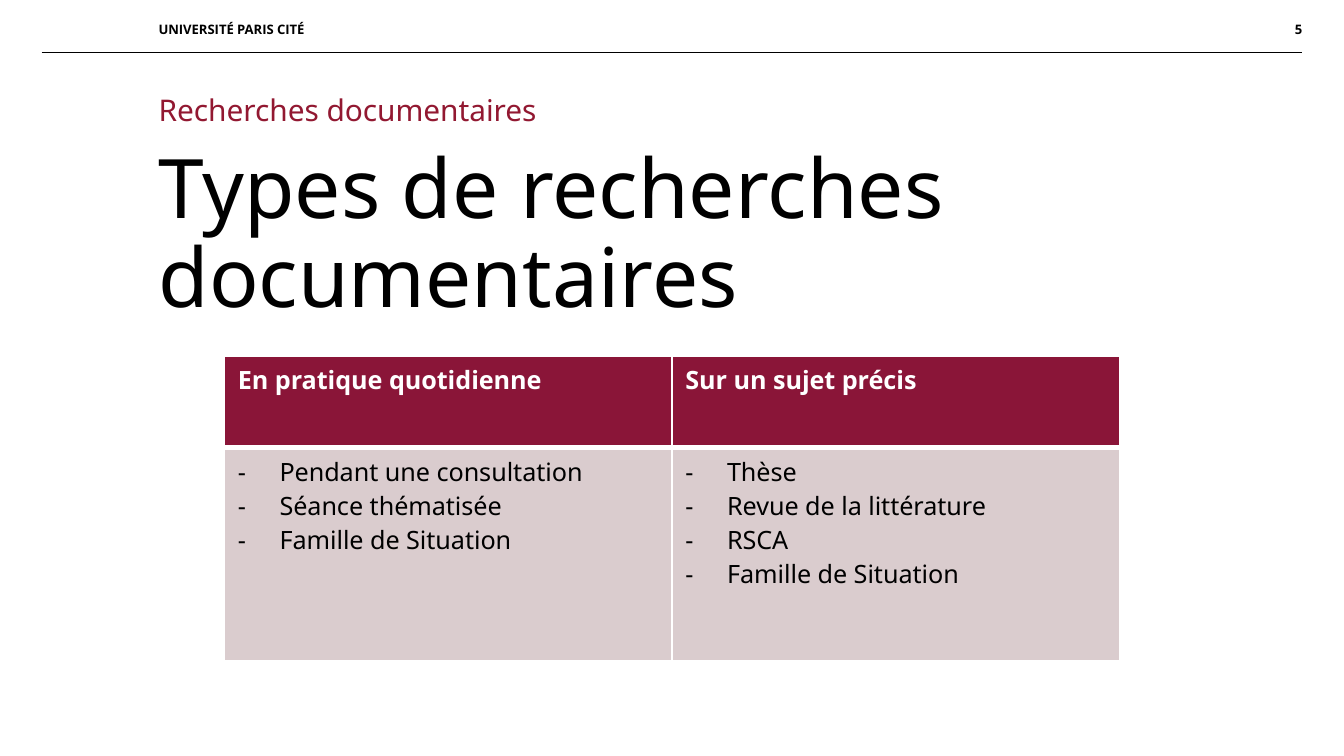
from dataclasses import dataclass

from lxml import etree
from pptx import Presentation
from pptx import util as u
from pptx.dml.color import RGBColor
from pptx.enum import shapes, text
from pptx.oxml import ns


@dataclass(frozen=True)
class Theme:
    black: str = "000000"
    white: str = "FFFFFF"
    heading: str = "921831"
    header_fill: str = "8A1538"
    body_fill: str = "DACCCE"
    font: str = "Noto Sans"
    small_font: str = "Open Sans"
    small_size: float = 7
    heading_size: float = 16
    title_size: float = 44
    table_size: float = 13.5


THEME = Theme()
WIDTH = 10
LEFT, RIGHT = 1.18, 9.69
COLUMNS = [
    ("En pratique quotidienne",
     ["Pendant une consultation", "Séance thématisée", "Famille de Situation"]),
    ("Sur un sujet précis",
     ["Thèse", "Revue de la littérature", "RSCA", "Famille de Situation"]),
]


def style(paragraph, size, color, bold=False, name=THEME.font):
    font = paragraph.font
    font.name, font.size, font.bold = name, u.Pt(size), bold
    font.color.rgb = RGBColor.from_string(color)


def add_text(slide, box, words, size, color, align=text.PP_ALIGN.LEFT,
             anchor=text.MSO_ANCHOR.TOP, spacing=None, **font):
    shape = slide.shapes.add_textbox(*map(u.Inches, box))
    frame = shape.text_frame
    frame.word_wrap = True
    frame.vertical_anchor = anchor
    frame.margin_left = frame.margin_right = 0
    frame.margin_top = frame.margin_bottom = 0
    paragraph = frame.paragraphs[0]
    paragraph.text = words
    paragraph.alignment = align
    paragraph.line_spacing = spacing
    style(paragraph, size, color, **font)


def add_rule(slide, left, right, top):
    line = slide.shapes.add_connector(
        shapes.MSO_CONNECTOR.STRAIGHT,
        u.Inches(left), u.Inches(top), u.Inches(right), u.Inches(top))
    line.line.color.rgb = RGBColor.from_string(THEME.black)
    line.line.width = u.Pt(0.25)
    etree.SubElement(line._element.spPr, ns.qn("a:effectLst"))


def add_dash(paragraph, indent=0.31):
    properties = paragraph._p.get_or_add_pPr()
    properties.set("marL", str(u.Inches(indent)))
    properties.set("indent", str(-u.Inches(indent)))
    etree.SubElement(properties, ns.qn("a:buFont"), typeface=THEME.font)
    etree.SubElement(properties, ns.qn("a:buChar"), char="-")


def set_cell(cell, lines, fill, color, bold=False, dashes=False, top=1, bottom=1):
    # Borders come before the fill in the cell properties
    properties = cell._tc.get_or_add_tcPr()
    for side, width in (("L", 1), ("R", 1), ("T", top), ("B", bottom)):
        border = etree.SubElement(properties, ns.qn(f"a:ln{side}"), w=str(u.Pt(width)))
        solid = etree.SubElement(border, ns.qn("a:solidFill"))
        etree.SubElement(solid, ns.qn("a:srgbClr"), val=THEME.white)
    cell.fill.solid()
    cell.fill.fore_color.rgb = RGBColor.from_string(fill)

    cell.text = "\n".join(lines)
    for paragraph in cell.text_frame.paragraphs:
        if dashes:
            add_dash(paragraph)
        style(paragraph, THEME.table_size, color, bold)


def add_comparison(slide, box, row_heights):
    table = slide.shapes.add_table(2, len(COLUMNS), *map(u.Inches, box)).table
    for row, height in zip(table.rows, row_heights):
        row.height = u.Inches(height)
    for index, (header, items) in enumerate(COLUMNS):
        set_cell(table.cell(0, index), [header], THEME.header_fill, THEME.white,
                 bold=True, bottom=3)
        set_cell(table.cell(1, index), items, THEME.body_fill, THEME.black,
                 dashes=True, top=3)


def main():
    # A 16:9 slide
    presentation = Presentation()
    presentation.slide_width = u.Inches(WIDTH)
    presentation.slide_height = u.Inches(WIDTH * 9 / 16)
    slide = presentation.slides.add_slide(presentation.slide_layouts[6])

    # Running header with page number
    header = dict(size=THEME.small_size, color=THEME.black, bold=True,
                  name=THEME.small_font, anchor=text.MSO_ANCHOR.MIDDLE)
    add_text(slide, (LEFT, 0.1, 1.89, 0.24), "UNIVERSITÉ PARIS CITÉ", **header)
    add_rule(slide, 0.31, RIGHT, 0.39)
    add_text(slide, (RIGHT - 1.38, 0.1, 1.38, 0.24), "5",
             align=text.PP_ALIGN.RIGHT, **header)

    # Section and title
    add_text(slide, (LEFT, 0.71, RIGHT - LEFT, 0.31), "Recherches documentaires",
             THEME.heading_size, THEME.heading, spacing=0.9)
    add_text(slide, (LEFT, 1.1, 8.5, 1.34), "Types de recherches documentaires",
             THEME.title_size, THEME.black, spacing=0.9)

    # Two kinds of search
    add_comparison(slide, (1.67, 2.65, 6.66, 2.26), (0.68, 1.59))

    presentation.save("out.pptx")


if __name__ == "__main__":
    main()
